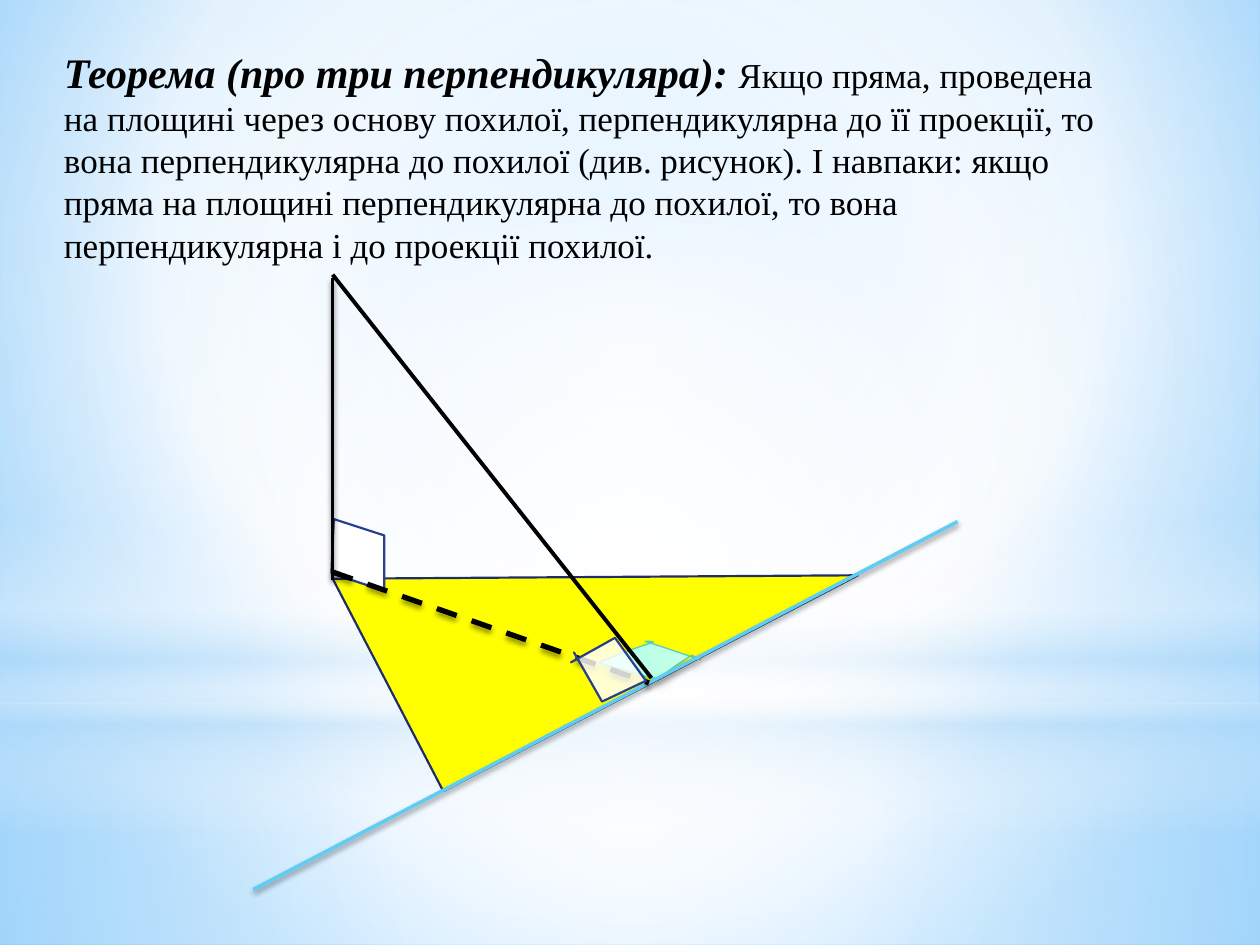
from lxml import etree
from pptx import Presentation
from pptx import util as u
from pptx.dml.color import RGBColor
from pptx.enum import dml, shapes, text
from pptx.oxml import ns

COLORS = {
    "white": "FFFFFF", "black": "000000", "yellow": "FFFF00",
    "sky": "9ED5FF", "deep_sky": "5BB9FF", "pale_blue": "B4DCFA",
    "navy": "1F2E69", "blue": "2A3E8E", "cyan": "5ECCF3",
    "mint": "AEFFE3", "light_mint": "C5FFEA", "pale_mint": "E9FFF7",
    "green": "5DCEAF",
}
FONT = "Times New Roman"
LINE_SHADOW = (45, 3.1, 1.8)
MARK_SHADOW = (20, 5, 4)
CENTER = (50, 50, 50, 50)


def rgb(name):
    return RGBColor.from_string(COLORS[name])


def child(parent, tag, **attributes):
    values = {key: str(value) for key, value in attributes.items()}
    return etree.SubElement(parent, ns.qn(tag), values)


def add_color(parent, name, opacity=100):
    color = child(parent, "a:srgbClr", val=COLORS[name])
    if opacity < 100:
        child(color, "a:alpha", val=opacity * 1000)


def set_gradient(fill, element, stops, center=None, angle=0):
    fill.solid()
    solid = element.find(".//" + ns.qn("a:solidFill"))
    gradient = etree.Element(ns.qn("a:gradFill"), rotWithShape="1")
    stop_list = child(gradient, "a:gsLst")
    for position, name, opacity in stops:
        stop = child(stop_list, "a:gs", pos=position * 1000)
        add_color(stop, name, opacity)
    if center:
        path = child(gradient, "a:path", path="circle")
        sides = dict(zip("ltrb", (side * 1000 for side in center)))
        child(path, "a:fillToRect", **sides)
    else:
        child(gradient, "a:lin", ang=angle * 60000, scaled=0)
    solid.getparent().replace(solid, gradient)


def set_shadow(shape, shadow=None):
    properties = shape._element.spPr
    for old in properties.findall(ns.qn("a:effectLst")):
        properties.remove(old)
    effects = child(properties, "a:effectLst")
    if shadow:
        opacity, blur, distance = shadow
        outer = child(effects, "a:outerShdw", blurRad=u.Pt(blur), dist=u.Pt(distance),
                      dir=90 * 60000, rotWithShape=0)
        add_color(outer, "black", opacity)


def set_line(shape, color, width):
    shape.line.color.rgb = rgb(color)
    shape.line.width = u.Pt(width)


def add_backdrop(slide, left, top, width):
    set_gradient(slide.background.fill, slide._element,
                 [(0, "sky", 100), (60, "white", 100), (100, "deep_sky", 100)],
                 (20, 10, 20, 60))
    rectangle, oval = shapes.MSO_SHAPE.RECTANGLE, shapes.MSO_SHAPE.OVAL
    panels = [
        (rectangle, 5.58, 1.92, CENTER,
         [(0, "white", 91), (37, "white", 76), (100, "pale_blue", 79)]),
        (rectangle, 0, 5.58, CENTER,
         [(0, "white", 89), (48, "white", 62), (100, "pale_blue", 79)]),
        (rectangle, 4.12, 2.5, None,
         [(0, "white", 0), (29, "white", 30), (45, "pale_blue", 40),
          (55, "white", 26), (65, "pale_blue", 60), (100, "white", 0)]),
        (oval, 1.75, 5.58, CENTER, [(0, "white", 100), (56, "white", 0)]),
    ]
    for kind, offset, height, center, stops in panels:
        panel = slide.shapes.add_shape(kind, left, top + u.Inches(offset),
                                       width, u.Inches(height))
        set_gradient(panel.fill, panel._element, stops, center, 90)
        panel.line.fill.background()
        panel.shadow.inherit = False


def curve_points(start, first, second, end, steps=10):
    for step in range(1, steps + 1):
        t = step / steps
        weights = ((1 - t) ** 3, 3 * t * (1 - t) ** 2, 3 * t * t * (1 - t), t ** 3)
        yield tuple(sum(w * point[axis] for w, point in
                        zip(weights, (start, first, second, end)))
                    for axis in (0, 1))


def add_figure(slide, left, top):
    def place(point):
        return left + u.Inches(point[0]), top + u.Inches(point[1])

    def add_outline(points, color, width):
        start, *rest = [place(point) for point in points]
        builder = slide.shapes.build_freeform(*start)
        builder.add_line_segments(rest, close=True)
        outline = builder.convert_to_shape()
        set_line(outline, color, width)
        return outline

    def add_segment(start, end, color, width, shadow=None):
        segment = slide.shapes.add_connector(shapes.MSO_CONNECTOR.STRAIGHT,
                                             *place(start), *place(end))
        set_line(segment, color, width)
        set_shadow(segment, shadow)
        return segment

    plane = slide.shapes.add_shape(shapes.MSO_SHAPE.RIGHT_TRIANGLE, *place((0.87, 1.63)),
                                   u.Inches(3.71), u.Inches(1.9))
    plane.rotation = 332.5
    plane.fill.solid()
    plane.fill.fore_color.rgb = rgb("yellow")
    set_line(plane, "navy", 1.25)
    plane.shadow.inherit = False

    curves = [
        ((3.14, 3.09), (3.28, 3.09), (3.12, 3.09)),
        ((3.53, 3.22), (3.65, 3.28), (3.49, 3.2)),
        ((3.18, 3.39), (3.3, 3.38), (3.17, 3.38)),
    ]
    mark_points = [(2.75, 3.26)]
    for curve in curves:
        mark_points.extend(curve_points(mark_points[-1], *curve))
    projection_mark = add_outline(mark_points, "green", 0.75)
    set_gradient(projection_mark.fill, projection_mark._element,
                 [(0, "mint", 100), (88, "light_mint", 100), (100, "pale_mint", 100)])
    set_shadow(projection_mark, MARK_SHADOW)

    add_segment((0.64, 0.18), (3.17, 3.38), "black", 2.25)
    add_segment((0.01, 5.06), (5.6, 2.14), "cyan", 2, LINE_SHADOW)

    height_mark = add_outline([(0.63, 2.55), (1.05, 2.69), (1.05, 2.25), (0.65, 2.12)],
                              "blue", 1.25)
    height_mark.fill.solid()
    height_mark.fill.fore_color.rgb = rgb("white")
    set_shadow(height_mark)

    add_segment((0.64, 0.21), (0.64, 2.6), "black", 2, LINE_SHADOW)
    projection = add_segment((0.64, 2.54), (3.15, 3.42), "black", 3, LINE_SHADOW)
    projection.line.dash_style = dml.MSO_LINE.DASH

    slant_mark = add_outline([(2.55, 3.19), (2.79, 3.57), (3.13, 3.39), (2.87, 3.06),
                              (2.53, 3.27), (2.58, 3.24)], "blue", 1.25)
    slant_mark.rotation = 2.6
    set_gradient(slant_mark.fill, slant_mark._element,
                 [(0, "white", 81), (100, "white", 81)])
    set_shadow(slant_mark)


def add_theorem(slide, left, top, width, height):
    box = slide.shapes.add_textbox(left, top, width, height)
    frame = box.text_frame
    frame.word_wrap = True
    frame.auto_size = text.MSO_AUTO_SIZE.SHAPE_TO_FIT_TEXT
    paragraph = frame.paragraphs[0]
    paragraph.font.name = FONT
    paragraph.font.color.rgb = rgb("black")
    parts = [
        ("Теорема (про три перпендикуляра): ", 24, True),
        ("Якщо пряма, проведена на площині через основу похилої, перпендикулярна "
         "до її проекції, то вона перпендикулярна до похилої (див. рисунок). "
         "І навпаки: якщо пряма на площині перпендикулярна до похилої, то вона "
         "перпендикулярна і до проекції похилої.", 20, False),
    ]
    for wording, size, strong in parts:
        run = paragraph.add_run()
        run.text = wording
        run.font.size = u.Pt(size)
        run.font.bold = run.font.italic = strong


def main():
    presentation = Presentation()
    presentation.slide_width = u.Inches(10)
    presentation.slide_height = u.Inches(7.5)
    slide = presentation.slides.add_slide(presentation.slide_layouts[6])
    add_backdrop(slide, 0, 0, presentation.slide_width)
    add_figure(slide, u.Inches(2), u.Inches(2))
    add_theorem(slide, u.Inches(0.41), u.Inches(0.32), u.Inches(8.63), u.Inches(1.85))
    presentation.save("out.pptx")


if __name__ == "__main__":
    main()
